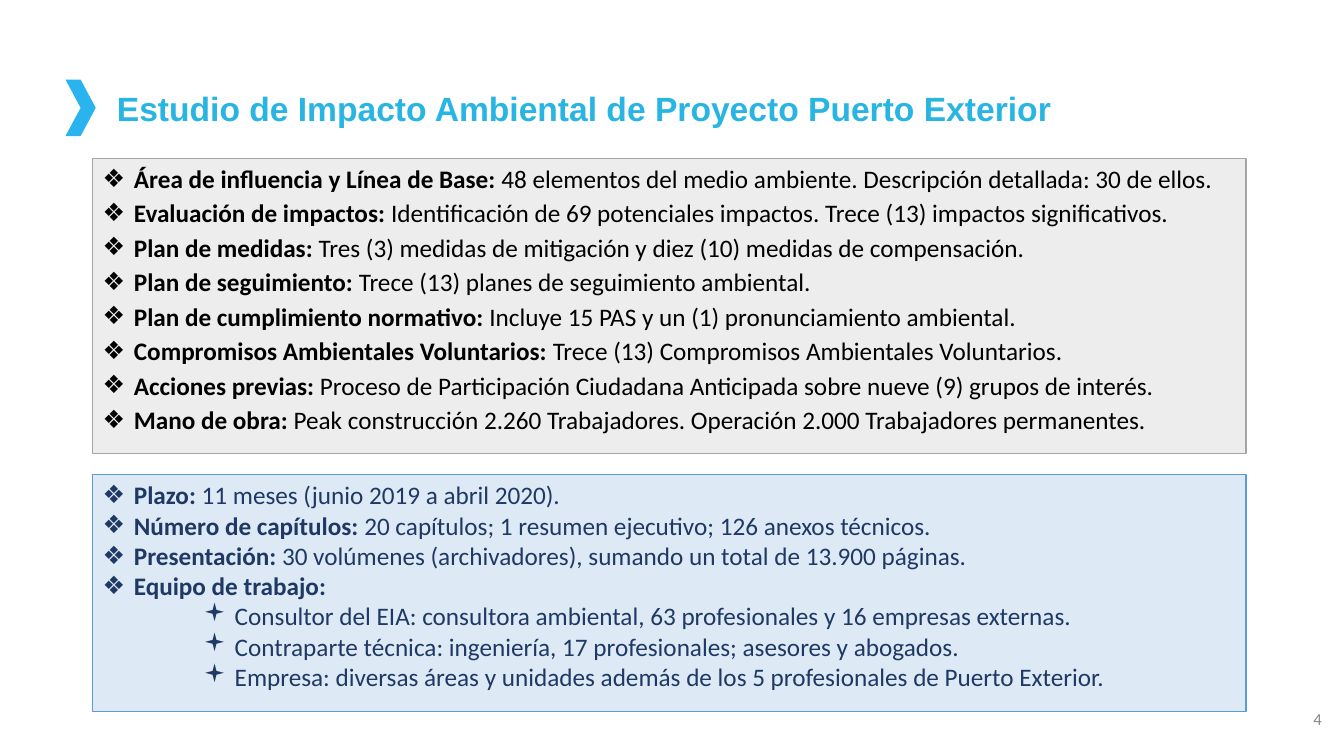
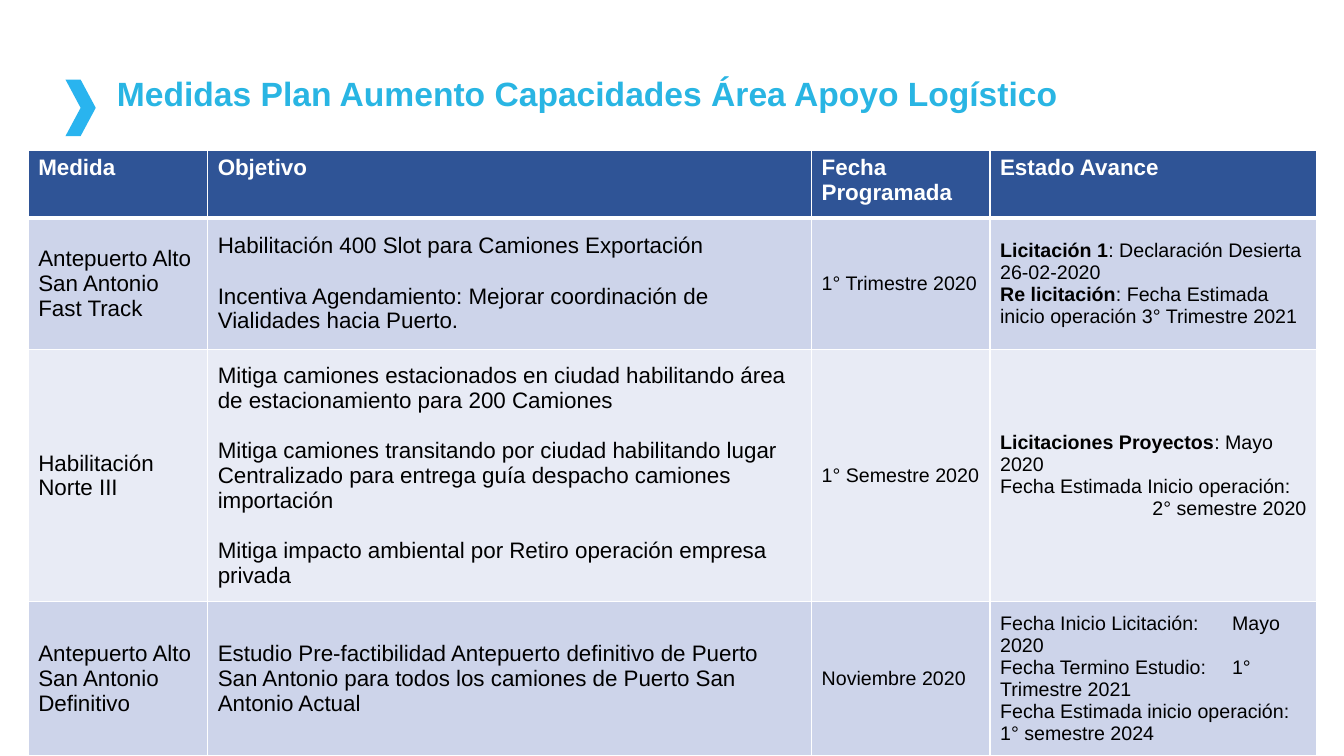
from lxml import etree
from pptx import Presentation
from pptx import util as u
from pptx.dml.color import RGBColor
from pptx.enum import shapes, text
from pptx.oxml.ns import qn

ACCENT, TITLE, NAVY, GREY = "29B4EF", "29B5E3", "1F3864", "888888"
BLACK, WHITE, HEADER = "000000", "FFFFFF", "2F5496"
BANDS = ["CDD4EA", "E8EBF5"]
ALIGN = text.PP_ALIGN
ANCHOR = text.MSO_ANCHOR

RESULTS = [
    "Área de influencia y Línea de Base:| 48 elementos del medio ambiente. Descripción detallada: 30 de ellos.",
    "Evaluación de impactos:| Identificación de 69 potenciales impactos. Trece (13) impactos significativos.",
    "Plan de medidas:| Tres (3) medidas de mitigación y diez (10) medidas de compensación.",
    "Plan de seguimiento:| Trece (13) planes de seguimiento ambiental.",
    "Plan de cumplimiento normativo:| Incluye 15 PAS y un (1) pronunciamiento ambiental.",
    "Compromisos Ambientales Voluntarios:| Trece (13) Compromisos Ambientales Voluntarios.",
    "Acciones previas:| Proceso de Participación Ciudadana Anticipada sobre nueve (9) grupos de interés.",
    "Mano de obra:| Peak construcción 2.260 Trabajadores. Operación 2.000 Trabajadores permanentes.",
]
STUDY = [
    "Plazo:| 11 meses (junio 2019 a abril 2020).",
    "Número de capítulos:| 20 capítulos; 1 resumen ejecutivo; 126 anexos técnicos.",
    "Presentación:| 30 volúmenes (archivadores), sumando un total de 13.900 páginas.",
    "Equipo de trabajo:|",
    "Consultor del EIA: consultora ambiental, 63 profesionales y 16 empresas externas.",
    "Contraparte técnica: ingeniería, 17 profesionales; asesores y abogados.",
    "Empresa: diversas áreas y unidades además de los 5 profesionales de Puerto Exterior.",
]
COLUMNS = [1.78, 5.99, 1.77, 3.24]
ROWS = [0.67, 1.31, 2.5, 1.53]
HEADINGS = ["Medida", "Objetivo", "Fecha Programada", "Estado Avance"]
MEASURES = [
    [["Antepuerto Alto San Antonio", "Fast Track"],
     ["Habilitación 400 Slot para Camiones Exportación",
      "Incentiva Agendamiento: Mejorar coordinación de Vialidades hacia Puerto."],
     ["1° Trimestre 2020"],
     ["Licitación 1|: Declaración Desierta 26-02-2020",
      "Re licitación|: Fecha Estimada inicio operación 3° Trimestre 2021"]],
    [["Habilitación", "Norte III"],
     ["Mitiga camiones estacionados en ciudad habilitando área de estacionamiento para 200 Camiones",
      "Mitiga camiones transitando por ciudad habilitando lugar Centralizado para entrega guía "
      "despacho camiones importación",
      "Mitiga impacto ambiental por Retiro operación empresa privada"],
     ["1° Semestre 2020"],
     ["Licitaciones Proyectos|: Mayo 2020", "Fecha Estimada Inicio operación:", "2° semestre 2020"]],
    [["Antepuerto Alto San Antonio Definitivo"],
     ["Estudio Pre-factibilidad Antepuerto definitivo de Puerto San Antonio para todos los "
      "camiones de Puerto San Antonio Actual"],
     ["Noviembre 2020"],
     ["Fecha Inicio Licitación:\tMayo 2020", "Fecha Termino Estudio:\t1° Trimestre 2021",
      "Fecha Estimada inicio operación: 1° semestre 2024"]],
]


def rgb(value):
    """Turn a hex string into a colour."""
    return RGBColor.from_string(value)


def sub(parent, tag, **attrs):
    """Append a DrawingML element."""
    return etree.SubElement(parent, qn(tag), attrs)


def set_frame(tf, x=0.1, y=0.05, anchor=ANCHOR.TOP):
    """Set wrapping, insets and anchor of a text frame."""
    tf.word_wrap = True
    tf.margin_left = tf.margin_right = u.Inches(x)
    tf.margin_top = tf.margin_bottom = u.Inches(y)
    tf.vertical_anchor = anchor


def write(p, line, size, color, font="Arial", bold=False):
    """Write a line whose part before a bar is bold."""
    head, bar, tail = line.rpartition("|")
    for words, strong in ((head, True), (tail, bold)):
        if words:
            r = p.add_run()
            r.text = words
            r.font.name, r.font.size = font, u.Pt(size)
            r.font.bold = strong
            r.font.color.rgb = rgb(color)


def add_paragraph(tf, i):
    """Return the first paragraph of a frame or a new one."""
    return tf.add_paragraph() if i else tf.paragraphs[0]


def add_bullet(p, char, color, left):
    """Give a paragraph a hanging bullet."""
    pr = p._p.get_or_add_pPr()
    pr.set("marL", str(u.Inches(left)))
    pr.set("indent", str(-u.Inches(0.31)))
    sub(sub(pr, "a:buClr"), "a:srgbClr", val=color)
    sub(pr, "a:buFont", typeface="Wingdings" if char == "▪" else "Arial")
    sub(pr, "a:buChar", char=char)


def add_box(s, box, kind, fill, line=None):
    """Add a flat filled shape."""
    sp = s.shapes.add_shape(kind, *map(u.Inches, box))
    sp.shadow.inherit = False
    sp.fill.solid()
    sp.fill.fore_color.rgb = rgb(fill)
    if line:
        sp.line.color.rgb = rgb(line)
        sp.line.width = u.Pt(1)
    else:
        sp.line.fill.background()
    return sp


def add_label(s, box, line, size, color, font="Arial", bold=False, align=ALIGN.LEFT, **frame):
    """Add a one-line text box."""
    tf = s.shapes.add_textbox(*map(u.Inches, box)).text_frame
    set_frame(tf, **frame)
    tf.paragraphs[0].alignment = align
    write(tf.paragraphs[0], line, size, color, font, bold)


def add_slide(prs, title, top):
    """Add a blank slide with the chevron and its title."""
    s = prs.slides.add_slide(prs.slide_layouts[6])
    add_box(s, (0.65, 0.79, 0.3, 0.56), shapes.MSO_SHAPE.CHEVRON, ACCENT)
    add_label(s, (1.03, top, 10.13, 0.54), title, 24, TITLE, bold=True, x=0.13, y=0.07)
    return s


def add_panel(s, box, lines, fill, line, color, gap=0):
    """Add a bordered panel of bulleted lines."""
    tf = add_box(s, box, shapes.MSO_SHAPE.RECTANGLE, fill, line).text_frame
    set_frame(tf)
    for i, words in enumerate(lines):
        p = add_paragraph(tf, i)
        main = "|" in words
        add_bullet(p, "❖" if main else "▪", color, 0.31 if main else 1.31)
        p.alignment = ALIGN.LEFT
        p.space_before = u.Pt(gap if i else 0)
        write(p, words, 18, color, "Calibri")


def style_cell(cell, fill, anchor, bottom=1):
    """Set the white borders, fill and frame of a cell."""
    pr = cell._tc.get_or_add_tcPr()
    for side, width in (("L", 1), ("R", 1), ("T", 1), ("B", bottom)):
        ln = sub(pr, "a:ln" + side, w=str(u.Pt(width)))
        sub(sub(ln, "a:solidFill"), "a:srgbClr", val=WHITE)
    cell.fill.solid()
    cell.fill.fore_color.rgb = rgb(fill)
    cell.margin_left = cell.margin_right = u.Inches(0.1)
    cell.margin_top = cell.margin_bottom = u.Inches(0.05)
    cell.vertical_anchor = anchor


def fill_cell(cell, lines, column):
    """Write the paragraphs of a body cell."""
    for i, words in enumerate(lines):
        p = add_paragraph(cell.text_frame, i)
        if "\t" in words:
            tabs = sub(p._p.get_or_add_pPr(), "a:tabLst")
            sub(tabs, "a:tab", pos=str(u.Inches(2.3)), algn="l")
        if column == 1 and i:
            p.space_before = u.Pt(18)
        if words.startswith("2° semestre"):
            p.alignment = ALIGN.RIGHT
        write(p, words, 16 if column < 2 else 14, BLACK)


def add_measures(s, left, top):
    """Add the table of measures."""
    box = (left, top, sum(COLUMNS), sum(ROWS))
    table = s.shapes.add_table(len(ROWS), len(COLUMNS), *map(u.Inches, box)).table
    table.horz_banding = False
    for column, width in zip(table.columns, COLUMNS):
        column.width = u.Inches(width)
    for row, height in zip(table.rows, ROWS):
        row.height = u.Inches(height)
    for j, heading in enumerate(HEADINGS):
        cell = table.cell(0, j)
        style_cell(cell, HEADER, ANCHOR.TOP, bottom=3)
        write(cell.text_frame.paragraphs[0], heading, 16, WHITE, bold=True)
    for i, measure in enumerate(MEASURES):
        for j, lines in enumerate(measure):
            cell = table.cell(i + 1, j)
            style_cell(cell, BANDS[i % 2], ANCHOR.MIDDLE, bottom=1)
            fill_cell(cell, lines, j)


def study_slide(prs):
    """Build the environmental impact study slide."""
    s = add_slide(prs, "Estudio de Impacto Ambiental de Proyecto Puerto Exterior", 0.8)
    add_label(s, (10.19, 6.93, 3, 0.4), "4", 12, GREY, "Calibri", align=ALIGN.RIGHT,
              x=0.08, y=0.04, anchor=ANCHOR.MIDDLE)
    add_panel(s, (0.92, 1.57, 11.44, 2.93), RESULTS, "EDEDED", "A5A5A5", BLACK, gap=3)
    add_panel(s, (0.92, 4.71, 11.44, 2.35), STUDY, "DDEAF6", "5B9BD5", NAVY)


def measures_slide(prs):
    """Build the logistics capacity measures slide."""
    s = add_slide(prs, "Medidas Plan Aumento Capacidades Área Apoyo Logístico", 0.65)
    add_measures(s, 0.28, 1.49)


def main():
    """Build and save the presentation."""
    prs = Presentation()
    prs.slide_width, prs.slide_height = u.Inches(13.33), u.Inches(7.5)
    study_slide(prs)
    measures_slide(prs)
    prs.save("out.pptx")


if __name__ == "__main__":
    main()
